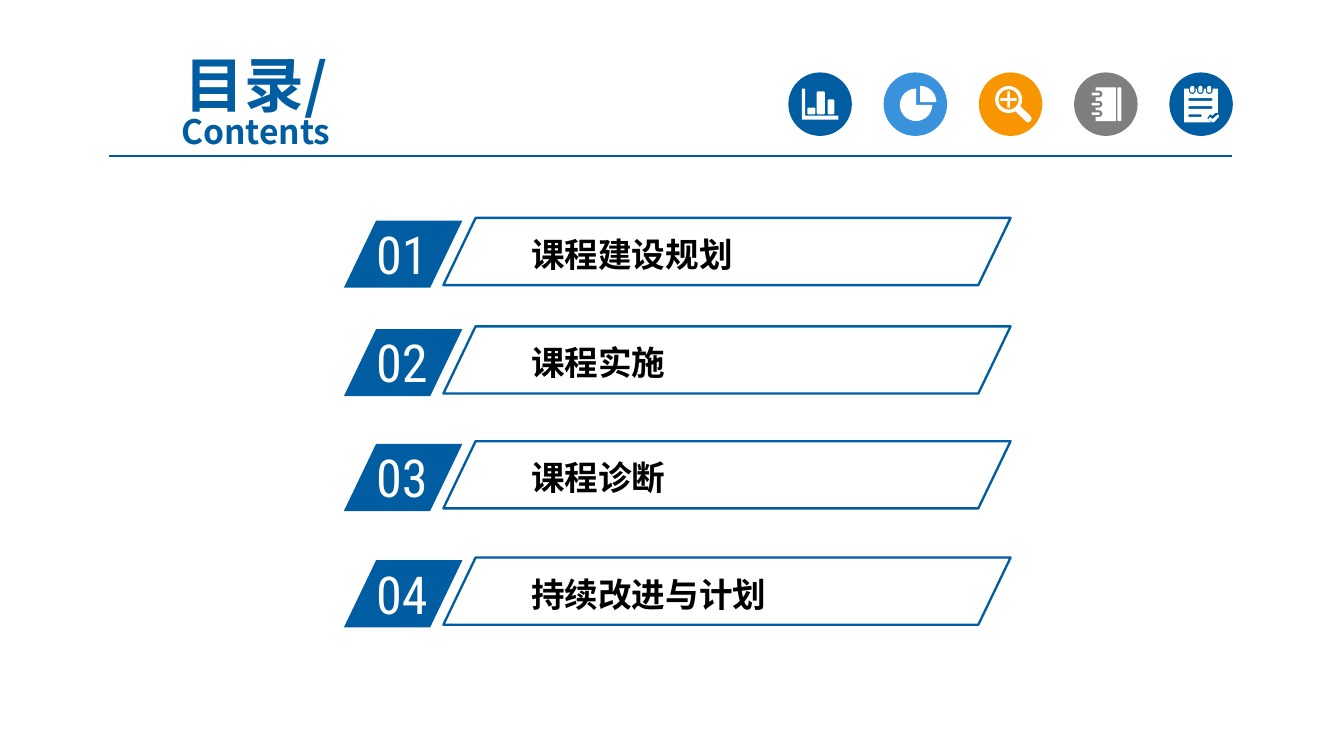
from math import cos, radians, sin

from pptx import Presentation
from pptx.dml.color import RGBColor
from pptx.enum.shapes import MSO_CONNECTOR, MSO_SHAPE as Shp
from pptx.enum.text import MSO_ANCHOR, MSO_AUTO_SIZE, PP_ALIGN
from pptx.oxml.ns import qn
from pptx.util import Cm, Pt

BLUE = RGBColor(0x00, 0x5D, 0xA2)
RULE_BLUE = RGBColor(0x00, 0x5B, 0x9E)
LIGHT_BLUE = RGBColor(0x39, 0x92, 0xDB)
ORANGE = RGBColor(0xF7, 0x96, 0x00)
GREY = RGBColor(0x7F, 0x7F, 0x7F)
WHITE = RGBColor(0xFF, 0xFF, 0xFF)
BLACK = RGBColor(0x00, 0x00, 0x00)
CJK, LATIN = "Noto Sans CJK SC", "Roboto Condensed"

# Agenda rows: top in cm and label
ROWS = [(4.17, "课程建设规划"), (6.22, "课程实施"),
        (8.39, "课程诊断"), (10.59, "持续改进与计划")]
ICON_SIZE, ICON_GRID = 1.2, 47  # circle diameter in cm and in grid units


def write(p, text, *, size, color, font=CJK, bold=False, align=PP_ALIGN.LEFT,
          spacing=None):
    p.alignment = align
    if spacing:
        p.line_spacing = spacing
    r = p.add_run()
    r.text = text
    f = r.font
    f.name, f.size, f.bold = font, Pt(size), bold
    f.color.rgb = color
    ea = r._r.get_or_add_rPr().makeelement(qn("a:ea"), {"typeface": font})
    r._r.rPr.find(qn("a:latin")).addnext(ea)


def add_text(s, text, x, y, w, h, inset=(0.25, 0.13), **fmt):
    tf = s.shapes.add_textbox(Cm(x), Cm(y), Cm(w), Cm(h)).text_frame
    tf.word_wrap = True
    tf.margin_left = tf.margin_right = Cm(inset[0])
    tf.margin_top = tf.margin_bottom = Cm(inset[1])
    write(tf.paragraphs[0], text, **fmt)


def paint(sp, fill=None, line=None):
    sp.shadow.inherit = False
    if fill is None:
        sp.fill.background()
    else:
        sp.fill.solid()
        sp.fill.fore_color.rgb = fill
    if line is None:
        sp.line.fill.background()
    else:
        sp.line.color.rgb = line
        sp.line.width = Pt(1.25)


def add_slanted(s, x, y, w, **style):
    sp = s.shapes.add_shape(Shp.PARALLELOGRAM, Cm(x), Cm(y), Cm(w), Cm(1.27))
    sp.adjustments[0] = 0.48
    paint(sp, **style)


def add_title(s):
    sp = s.shapes.title
    sp.left, sp.top, sp.width, sp.height = Cm(1.7), Cm(1.32), Cm(6.27), Cm(1.37)
    tf = sp.text_frame
    tf.auto_size = MSO_AUTO_SIZE.NONE
    tf.vertical_anchor = MSO_ANCHOR.MIDDLE
    fmt = dict(color=BLUE, bold=True, align=PP_ALIGN.CENTER, spacing=0.8)
    write(tf.paragraphs[0], "目录/", size=32, **fmt)
    write(tf.add_paragraph(), "Contents", size=18, **fmt)


def add_rule(s):
    ln = s.shapes.add_connector(MSO_CONNECTOR.STRAIGHT, Cm(2.06), Cm(2.95),
                                Cm(23.29), Cm(2.95))
    ln.line.color.rgb = RULE_BLUE
    ln.line.width = Pt(0.75)
    pr = ln._element.spPr
    pr.append(pr.makeelement(qn("a:effectLst"), {}))


# Outlines in icon grid units
def arc(cx, cy, r, start, end, steps=24):
    angles = [radians(start + (end - start) * i / steps) for i in range(steps + 1)]
    return [(cx + r * cos(a), cy + r * sin(a)) for a in angles]


def pill(x, y, w, h, r=1):
    corners = [(x + w - r, y + h - r, 0), (x + r, y + h - r, 90),
               (x + r, y + r, 180), (x + w - r, y + r, 270)]
    return [pt for cx, cy, a in corners for pt in arc(cx, cy, r, a, a + 90, 6)]


def bar_chart():
    axes = [(10, 12), (12.5, 12), (12.5, 32), (37, 32), (37, 35), (10, 35)]
    return [axes, pill(14, 26, 6, 5), pill(21, 14, 6, 17), pill(29, 20, 5, 11)]


def pie():
    return [[(27, 22)] + arc(27, 22, 12, -90, 0),
            [(24, 24)] + arc(24, 24, 12, 0, 270)]


def magnifier():
    handle = [(38, 32), (39, 34), (38, 36.5), (36, 37), (34.5, 36)]
    plus = [(-1, -6), (1, -6), (1, -1), (6, -1), (6, 1), (1, 1),
            (1, 6), (-1, 6), (-1, 1), (-6, 1), (-6, -1), (-1, -1)]
    return [arc(22, 20, 10, 60, 390) + handle, arc(22, 20, 7.5, 0, 360),
            [(22 + x, 20 + y) for x, y in plus]]


def notebook():
    rings = (30.5, 23.5, 16)
    body = [(16, 11), (31, 11), (31, 36), (16, 36)]
    for c in rings:
        body += [(16, c + 2.5)] + arc(18.5, c, 2.5, 90, -90) + [(16, c - 2.5)]
    return [body, pill(32, 11, 3, 25)] + [pill(13, c - 1, 6, 2) for c in rings]


def notepad():
    rings = (17, 23, 29.5)
    body = [(11, 12)]
    for c in rings:
        body += [(c - 2.5, 12)] + arc(c, 13.5, 2.5, 180, 0) + [(c + 2.5, 12)]
    body += [(36, 12), (36, 30), (34, 30), (32, 32), (30, 31), (28, 34),
             (31, 37), (11, 37)]
    check = [(36, 31), (37, 32.5), (33, 37), (32, 37), (29, 34.5), (30, 33),
             (32, 34.5)]
    lines = [pill(14, y, w, 2) for y, w in ((19, 18), (25, 18), (31, 10))]
    return [body, check] + lines + [pill(c - 1.5, 10, 3, 5, 1.4) for c in rings]


def add_icon(s, x, y, color, outlines):
    size = Cm(ICON_SIZE)
    paint(s.shapes.add_shape(Shp.OVAL, Cm(x), Cm(y), size, size), fill=color)
    unit = size / ICON_GRID
    paths = [[(round(Cm(x) + px * unit), round(Cm(y) + py * unit))
              for px, py in outline] for outline in outlines]
    fb = s.shapes.build_freeform(*paths[0][0])
    fb.add_line_segments(paths[0][1:])
    for pts in paths[1:]:
        fb.move_to(*pts[0])
        fb.add_line_segments(pts[1:])
    paint(fb.convert_to_shape(), fill=WHITE)


def add_row(s, number, y, label):
    add_slanted(s, 6.5, y, 2.24, fill=BLUE)
    add_text(s, f"{number:02d}", 6.86, y - 0.1, 2.13, 1.25,
             size=28, color=WHITE, font=LATIN)
    add_text(s, label, 9.86, y + 0.15, 7.85, 0.97, inset=(0.18, 0.1),
             size=18, color=BLACK, bold=True)
    add_slanted(s, 8.38, y - 0.05, 10.72, line=BLUE)


def main():
    prs = Presentation()
    prs.slide_width, prs.slide_height = Cm(25.4), Cm(14.29)
    s = prs.slides.add_slide(prs.slide_layouts[5])

    # Header
    add_title(s)
    add_rule(s)
    icons = [(BLUE, bar_chart), (LIGHT_BLUE, pie), (ORANGE, magnifier),
             (GREY, notebook), (BLUE, notepad)]
    for i, (color, draw) in enumerate(icons):
        add_icon(s, 14.9 + 1.8 * i, 1.37, color, draw())

    # Agenda
    for number, (y, label) in enumerate(ROWS, 1):
        add_row(s, number, y, label)

    prs.save("out.pptx")


if __name__ == "__main__":
    main()
